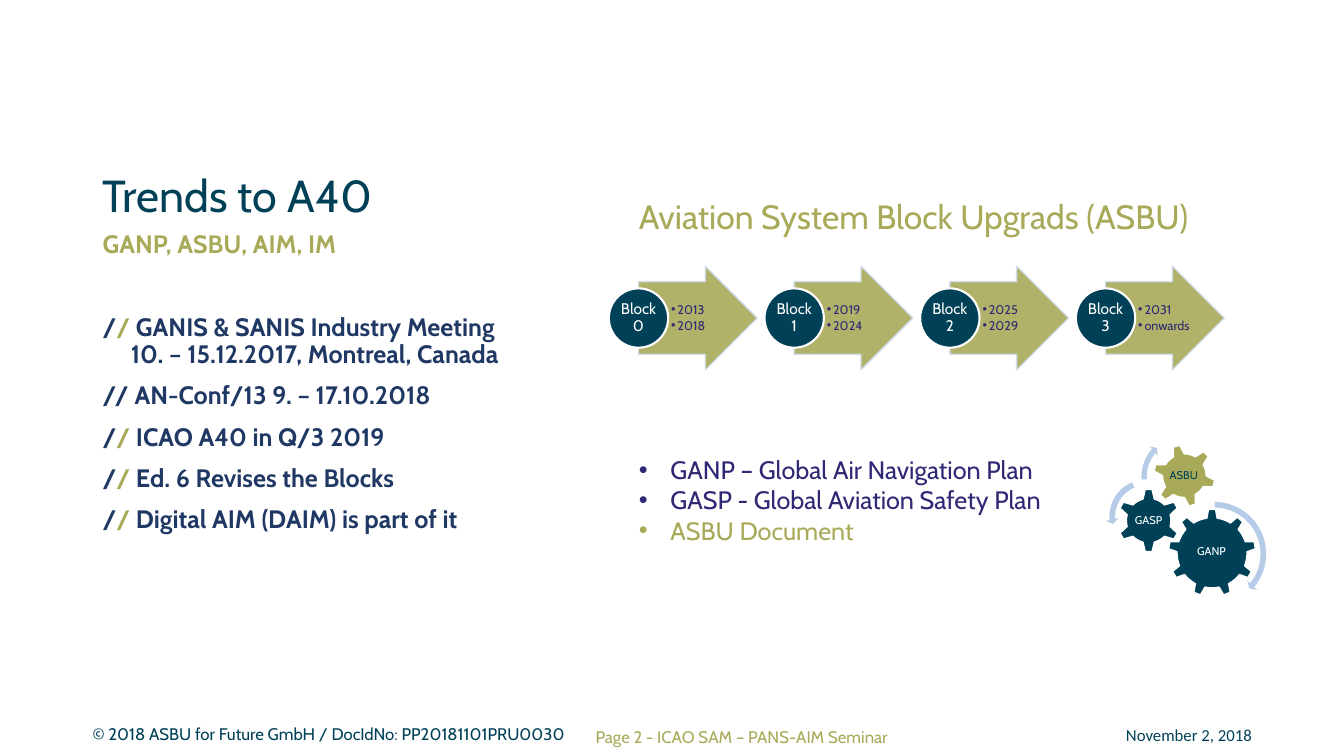
from dataclasses import dataclass

from lxml.etree import SubElement
from pptx import Presentation
from pptx.dml.color import RGBColor
from pptx.enum.shapes import MSO_SHAPE as SHAPE
from pptx.enum.text import MSO_ANCHOR as ANCHOR, PP_ALIGN as ALIGN
from pptx.oxml.ns import qn
from pptx.util import Pt

TEAL, OLIVE, NAVY, VIOLET = "004158", "A9AA59", "203864", "2F2875"
WHITE, PALE, SKY = "FFFFFF", "D2DEEF", "B5CBE7"
TIGHT = (0.72, 0.72, 0.72, 0.72)

Box = tuple[float, float, float, float]
Runs = list[tuple[str, str]]


@dataclass
class Style:
    size: float
    font: str = "Cabin"
    bold: bool = False
    align: ALIGN = ALIGN.LEFT
    anchor: ANCHOR = ANCHOR.TOP
    insets: Box = (7.2, 3.6, 7.2, 3.6)
    line: float = 1.0
    after: float = 0
    bullet: float = 0  # hanging indent of a bullet


@dataclass
class Para:
    runs: Runs
    before: float = 0
    hang: float = 0  # hanging indent without a bullet


@dataclass
class Block:
    name: str
    years: tuple[str, str]


@dataclass
class Gear:
    kind: SHAPE
    box: Box
    label: str
    label_box: Box
    fill: str = TEAL
    color: str = WHITE
    turn: float = 0


@dataclass
class Arc:
    kind: SHAPE
    box: Box
    adjust: tuple[float, ...]


def rgb(value: str) -> RGBColor:
    return RGBColor.from_string(value)


def write(sp, paras: list[Para], style: Style) -> None:
    tf = sp.text_frame
    margins = zip(("left", "top", "right", "bottom"), style.insets)
    frame = {f"margin_{side}": Pt(v) for side, v in margins}
    frame |= {"word_wrap": True, "vertical_anchor": style.anchor}
    for key, value in frame.items():
        setattr(tf, key, value)
    for i, para in enumerate(paras):
        p = tf.add_paragraph() if i else tf.paragraphs[0]
        layout = {"alignment": style.align, "line_spacing": style.line,
                  "space_before": Pt(para.before), "space_after": Pt(style.after)}
        for key, value in layout.items():
            setattr(p, key, value)
        pPr = p._p.get_or_add_pPr()
        indent = style.bullet or para.hang
        if indent:
            pPr.set("marL", str(Pt(indent)))
            pPr.set("indent", str(-Pt(indent)))
        if style.bullet:
            SubElement(pPr, qn("a:buFont")).set("typeface", "Arial")
            SubElement(pPr, qn("a:buChar")).set("char", "•")
        for text, color in para.runs:
            r = p.add_run()
            r.text = text
            font = {"size": Pt(style.size), "name": style.font, "bold": style.bold}
            for key, value in font.items():
                setattr(r.font, key, value)
            r.font.color.rgb = rgb(color)


def add_text(s, box: Box, paras: list[Para], style: Style) -> None:
    write(s.shapes.add_textbox(*map(Pt, box)), paras, style)


def add_shape(s, kind: SHAPE, box: Box, fill: str, line: str = "",
              width: float = 1, adjust: tuple[float, ...] = (), alpha: int = 100):
    sp = s.shapes.add_shape(kind, *map(Pt, box))
    sp.shadow.inherit = False
    for i, value in enumerate(adjust):
        sp.adjustments[i] = value
    sp.fill.solid()
    sp.fill.fore_color.rgb = rgb(fill)
    if line:
        sp.line.color.rgb = rgb(line)
        sp.line.width = Pt(width)
    else:
        sp.line.fill.background()
    if alpha < 100:
        for clr in sp._element.spPr.iter(qn("a:srgbClr")):
            SubElement(clr, qn("a:alpha")).set("val", str(alpha * 1000))
    return sp


def add_block(s, left: float, block: Block) -> None:
    add_shape(s, SHAPE.RIGHT_ARROW, (left + 21.2, 190.1, 84.8, 74.2), OLIVE, PALE,
              adjust=(0.7, 0.5), alpha=90)
    years = Style(9, anchor=ANCHOR.MIDDLE, insets=(2.1, 0.72, 0.72, 0.72),
                  line=0.9, after=1.35, bullet=4.5)
    add_text(s, (left + 42.4, 201.3, 41.3, 51.9),
             [Para([(year, VIOLET)]) for year in block.years], years)
    disc = add_shape(s, SHAPE.OVAL, (left, 206, 42.4, 42.4), TEAL, WHITE, 1.5)
    write(disc, [Para([(block.name, WHITE)])],
          Style(11, align=ALIGN.CENTER, anchor=ANCHOR.MIDDLE, insets=TIGHT, line=0.9))


def add_gear(s, gear: Gear) -> None:
    sp = add_shape(s, gear.kind, gear.box, gear.fill, WHITE)
    sp.rotation = gear.turn
    add_text(s, gear.label_box, [Para([(gear.label, gear.color)])],
             Style(8, align=ALIGN.CENTER, anchor=ANCHOR.MIDDLE, insets=TIGHT, line=0.9))


def topic(text: str, before: float = 10, second: str = OLIVE) -> Para:
    return Para([("/", NAVY), ("/ ", second), (text, NAVY)], before, 20.2)


TOPICS = [
    Para([("GANP, ASBU, AIM, IM", OLIVE)]),
    topic("GANIS & SANIS Industry Meeting 10. – 15.12.2017, Montreal, Canada", 39.7),
    topic("AN-Conf/13 9. – 17.10.2018", second=NAVY),
    topic("ICAO A40 in Q/3 2019"),
    topic("Ed. 6 Revises the Blocks"),
    topic("Digital AIM (DAIM) is part of it"),
]
DOCUMENTS = [
    Para([("GANP – Global Air Navigation Plan", VIOLET)]),
    Para([("GASP - Global Aviation Safety Plan", VIOLET)]),
    Para([("ASBU Document", OLIVE)]),
]
BLOCKS = [
    Block("Block 0", ("2013", "2018")),
    Block("Block 1", ("2019", "2024")),
    Block("Block 2", ("2025", "2029")),
    Block("Block 3", ("2031", "onwards")),
]
BLOCK_LEFT, BLOCK_PITCH = 434.9, 111.2
GEARS = [
    Gear(SHAPE.GEAR_9, (834.5, 363.6, 62.6, 62.6), "GANP", (846.7, 378, 37.4, 32.4)),
    Gear(SHAPE.GEAR_6, (797.8, 349.2, 45.4, 45.4), "GASP", (809.3, 360.7, 22.3, 22.3)),
    Gear(SHAPE.GEAR_6, (823.7, 317.5, 44.6, 44.6), "ASBU", (833, 327.6, 25.2, 25.2),
         OLIVE, TEAL, 345),
]
ARCS = [
    Arc(SHAPE.CIRCULAR_ARROW, (827.3, 355.7, 79.9, 79.9),
        (0.05, 2.99, 23.65, 162.38, 0.06)),
    Arc(SHAPE.LEFT_CIRCULAR_ARROW, (789.8, 339.8, 58.3, 58.3),
        (0.07, 4.3, 104.89, 148.38, 0.08)),
    Arc(SHAPE.CIRCULAR_ARROW, (812.9, 308.9, 62.6, 62.6),
        (0.06, 3.94, 133.14, 105.08, 0.07)),
]


def main() -> None:
    prs = Presentation()
    prs.slide_width, prs.slide_height = Pt(960), Pt(540)
    s = prs.slides.add_slide(prs.slide_layouts[6])

    # Footer
    add_text(s, (59, 513.4, 352.1, 21.6),
             [Para([("© 2018 ASBU for Future GmbH / DocIdNo: PP20181101PRU0030", TEAL)])],
             Style(12))
    add_text(s, (769.7, 514.1, 131.8, 21.6), [Para([("November 2, 2018", TEAL)])],
             Style(12, font="Calibri", align=ALIGN.RIGHT))
    add_text(s, (418.3, 515.5, 367.2, 21.6),
             [Para([("Page 2 - ICAO SAM – PANS-AIM Seminar", OLIVE)])], Style(12))

    # Title and topics
    add_text(s, (66.2, 36, 309.6, 126), [Para([("Trends to A40", TEAL)])],
             Style(32, anchor=ANCHOR.BOTTOM, line=0.9))
    add_text(s, (66.2, 162, 309.6, 317.5), TOPICS, Style(18, bold=True, line=0.9))

    # Block upgrades
    for i, block in enumerate(BLOCKS):
        add_block(s, BLOCK_LEFT + i * BLOCK_PITCH, block)
    add_text(s, (449.3, 321.1, 329, 72.7), DOCUMENTS, Style(18, bullet=22.5))
    add_text(s, (449.3, 136.1, 426.2, 36),
             [Para([("Aviation System Block Upgrads (ASBU)", OLIVE)])], Style(24))

    # Gears and turning arrows
    for gear in GEARS:
        add_gear(s, gear)
    for arc in ARCS:
        add_shape(s, arc.kind, arc.box, SKY, adjust=arc.adjust)

    prs.save("out.pptx")


if __name__ == "__main__":
    main()
